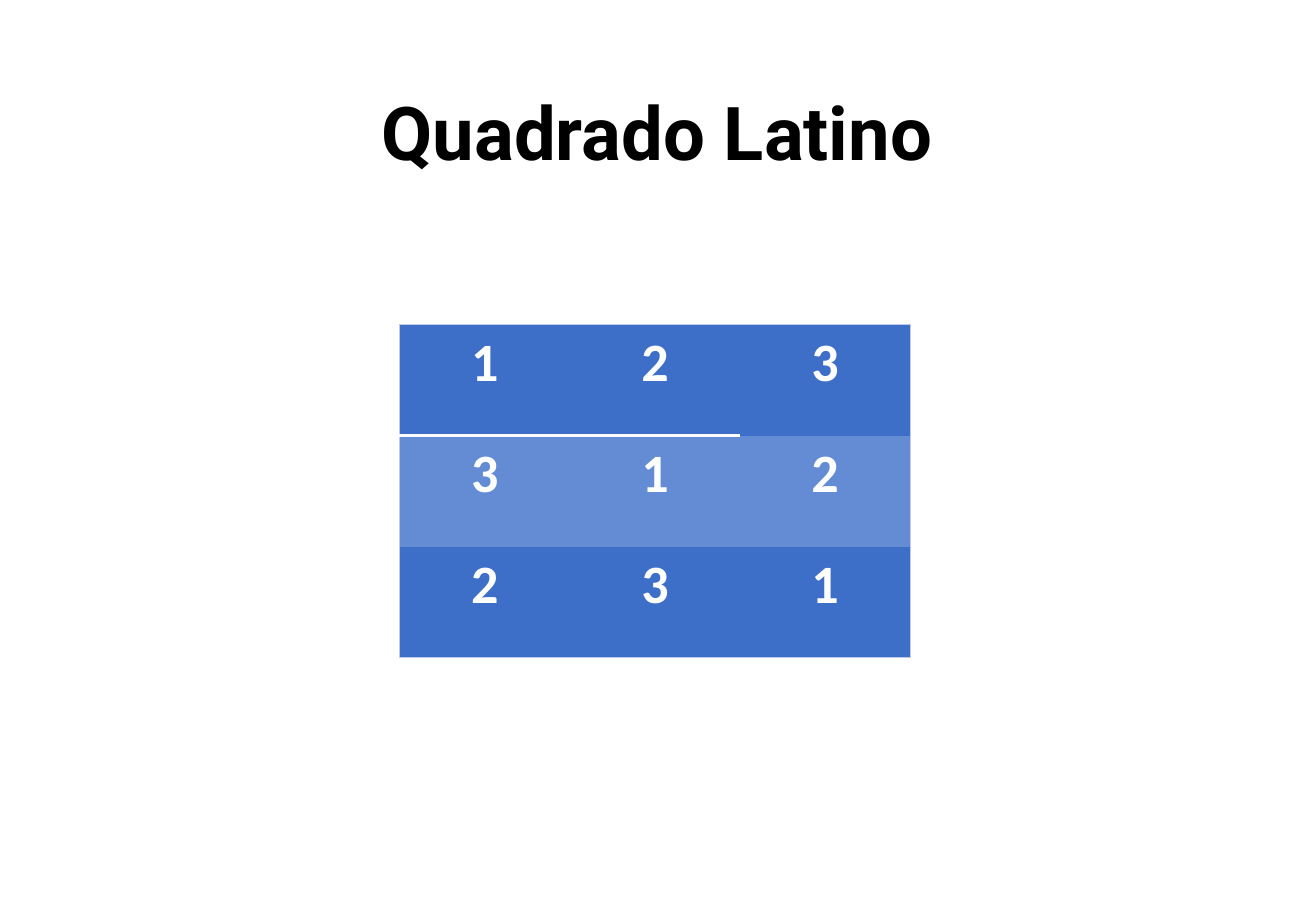
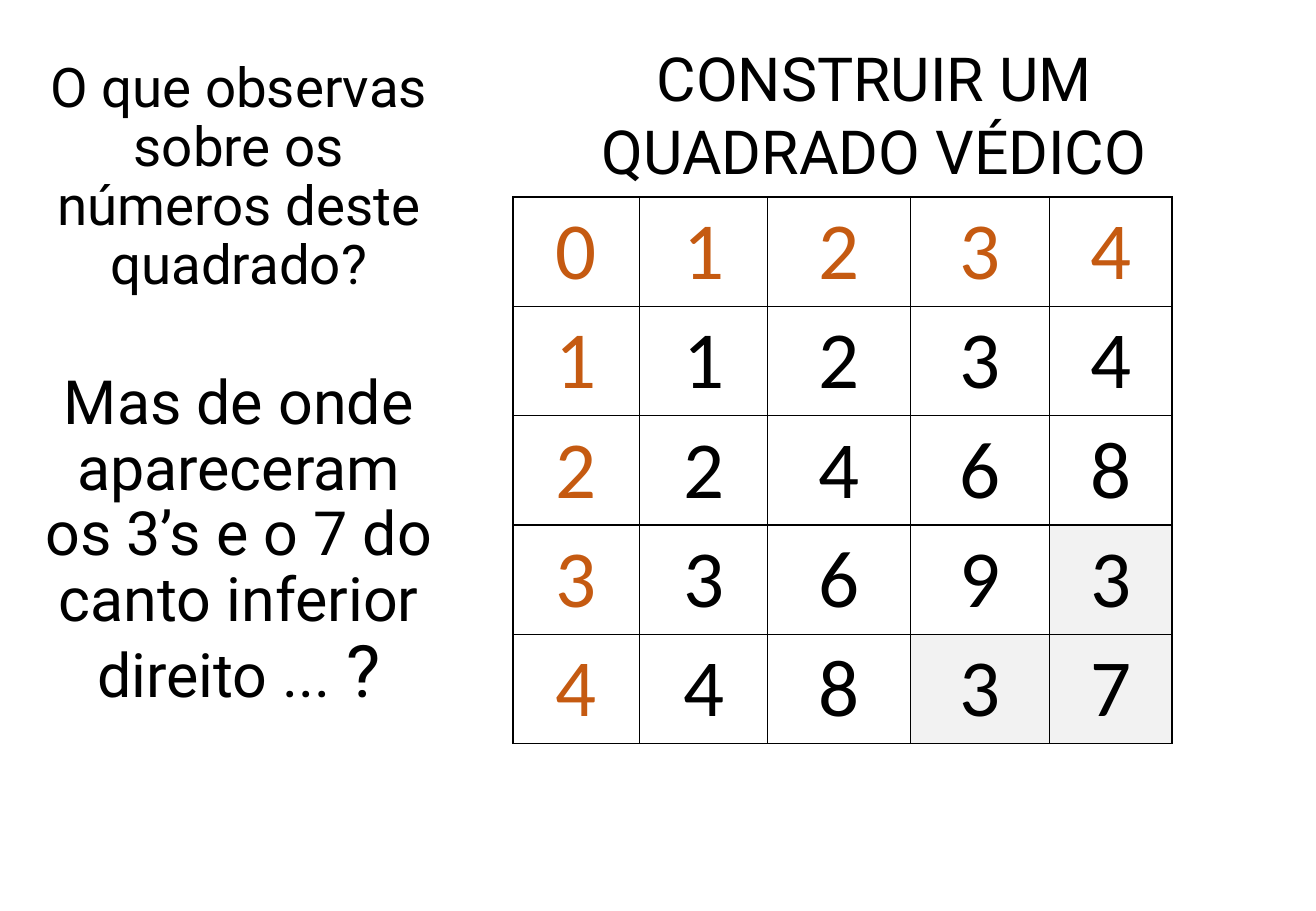
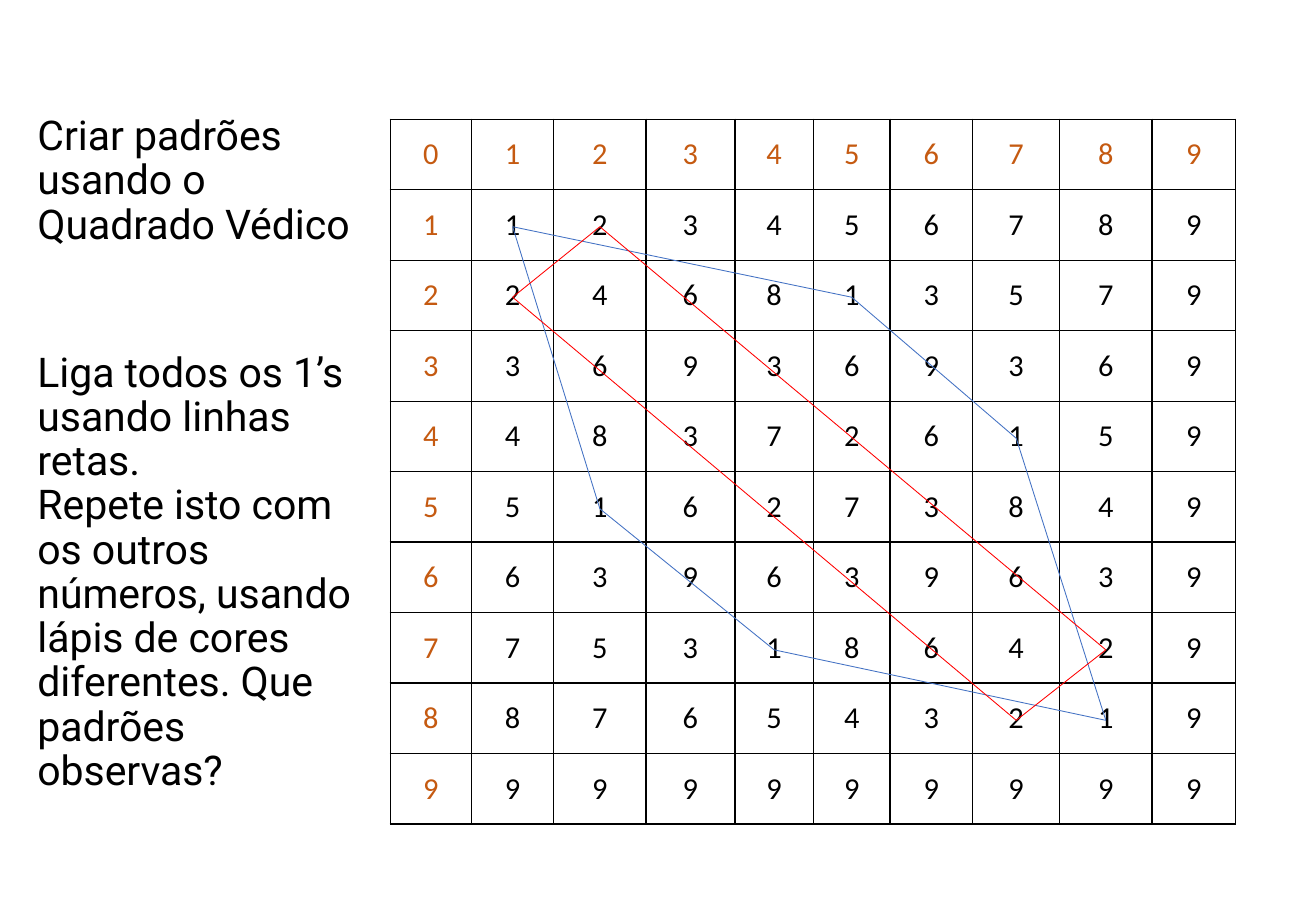
"""Builds three slides about Latin and Vedic squares."""
from itertools import accumulate

from lxml import etree
from pptx import Presentation
from pptx.dml.color import RGBColor
from pptx.enum.shapes import MSO_CONNECTOR
from pptx.enum.text import MSO_ANCHOR, PP_ALIGN
from pptx.oxml.ns import qn
from pptx.util import Pt

STRAIGHT = MSO_CONNECTOR.STRAIGHT
TOP, MIDDLE = MSO_ANCHOR.TOP, MSO_ANCHOR.MIDDLE
LEFT, CENTER = PP_ALIGN.LEFT, PP_ALIGN.CENTER

BLACK = RGBColor(0x00, 0x00, 0x00)
WHITE = RGBColor(0xFF, 0xFF, 0xFF)
ORANGE = RGBColor(0xC5, 0x5A, 0x11)
GREY = RGBColor(0xF2, 0xF2, 0xF2)
PALE_BLUE = RGBColor(0xC1, 0xC9, 0xE4)
DARK_BLUE = RGBColor(0x3D, 0x6E, 0xC8)
MID_BLUE = RGBColor(0x64, 0x8C, 0xD4)
LINE_BLUE = RGBColor(0x44, 0x72, 0xC4)
RED = RGBColor(0xFF, 0x00, 0x00)

TEXT_FONT, TABLE_FONT = "Roboto", "Calibri"
EDGES = ("L", "R", "T", "B")


class Deck:
    """Holds the presentation, the current slide and the shared style."""

    def __init__(self):
        self.prs = Presentation()
        self.prs.slide_width, self.prs.slide_height = Pt(780), Pt(540)
        self.s = None

    def slide(self):
        """Starts a blank slide."""
        self.s = self.prs.slides.add_slide(self.prs.slide_layouts[6])

    def style(self, p, font, size, color, bold=False):
        """Formats every run of a paragraph."""
        for r in p.runs:
            r.font.name, r.font.size, r.font.bold = font, Pt(size), bold
            r.font.color.rgb = color

    def text(self, x, y, w, h, lines, size, align=CENTER, anchor=TOP,
             spacing=0.9, gap=0, bold=False):
        """Adds a text box with one paragraph per line and a gap after the first."""
        tf = self.s.shapes.add_textbox(Pt(x), Pt(y), Pt(w), Pt(h)).text_frame
        tf.word_wrap, tf.vertical_anchor = True, anchor
        tf.text = "\n".join(lines)
        for p in tf.paragraphs:
            p.alignment, p.line_spacing = align, spacing
            self.style(p, TEXT_FONT, size, BLACK, bold)
        if gap:
            tf.paragraphs[1].space_before = Pt(gap)
        return tf

    def table(self, x, y, cols, row_h, values, size, anchor=TOP):
        """Adds a plain table of centred values."""
        rows = len(values)
        tbl = self.s.shapes.add_table(rows, len(cols), Pt(x), Pt(y), Pt(sum(cols)),
                                      Pt(row_h * rows)).table
        tbl.first_row = tbl.horz_banding = False
        for col, w in zip(tbl.columns, cols):
            col.width = Pt(w)
        for i, row in enumerate(values):
            tbl.rows[i].height = Pt(row_h)
            for j, value in enumerate(row):
                cell = tbl.cell(i, j)
                cell.margin_left = cell.margin_right = Pt(5.8)
                cell.margin_top = cell.margin_bottom = Pt(3.25)
                cell.vertical_anchor = anchor
                p = cell.text_frame.paragraphs[0]
                p.text, p.alignment = str(value), CENTER
                self.style(p, TABLE_FONT, size, BLACK)
        return tbl

    def paint(self, cell, borders, fill=None):
        """Sets the borders of a cell, given as edge: (colour, width), and its fill."""
        tc_pr = cell._tc.get_or_add_tcPr()
        for edge in EDGES:
            ln = etree.SubElement(tc_pr, qn(f"a:ln{edge}"))
            if edge in borders:
                color, width = borders[edge]
                ln.set("w", str(Pt(width)))
                solid = etree.SubElement(ln, qn("a:solidFill"))
                etree.SubElement(solid, qn("a:srgbClr")).set("val", str(color))
            else:
                etree.SubElement(ln, qn("a:noFill"))
        if fill is None:
            cell.fill.background()
        else:
            cell.fill.solid()
            cell.fill.fore_color.rgb = fill

    def latin_square(self, x, y, cols, row_h, values):
        """Adds the blue square with a pale frame and a white rule."""
        tbl = self.table(x, y, cols, row_h, values, 32)
        last = len(cols) - 1
        frame, rule = (PALE_BLUE, 0.5), (WHITE, 1.5)
        for i in range(len(values)):
            for j in range(len(cols)):
                on_frame = {"L": j == 0, "R": j == last, "T": i == 0, "B": i == last}
                borders = {edge: frame for edge in EDGES if on_frame[edge]}
                if i < 2 and j < last:
                    borders["T" if i else "B"] = rule
                cell = tbl.cell(i, j)
                self.style(cell.text_frame.paragraphs[0], TABLE_FONT, 32, WHITE, True)
                self.paint(cell, borders, MID_BLUE if i % 2 else DARK_BLUE)

    def vedic_square(self, x, y, cols, row_h, size, shaded=()):
        """Adds a table of digit sums of products, with orange headers."""
        n = len(cols)
        values = [[(i * j - 1) % 9 + 1 if i * j else i + j for j in range(n)]
                  for i in range(n)]
        tbl = self.table(x, y, cols, row_h, values, size, MIDDLE)
        borders = dict.fromkeys(EDGES, (BLACK, 1))
        for i in range(n):
            for j in range(n):
                cell = tbl.cell(i, j)
                if i * j == 0:
                    self.style(cell.text_frame.paragraphs[0], TABLE_FONT, size, ORANGE)
                self.paint(cell, borders, GREY if (i, j) in shaded else None)

    def loop(self, points, color):
        """Joins points with thin lines into a closed outline."""
        for start, end in zip(points, points[1:] + points[:1]):
            line = self.s.shapes.add_connector(STRAIGHT, *map(Pt, start + end))
            line.line.color.rgb, line.line.width = color, Pt(0.5)
            etree.SubElement(line._element.spPr, qn("a:effectLst"))


def main():
    """Draws the slides and saves them."""
    d = Deck()

    d.slide()
    d.text(53.3, 28.8, 672.5, 104.4, ["Quadrado Latino"], 44, anchor=MIDDLE, bold=True)
    d.latin_square(237, 192.4, [100.8] * 3, 65.8, [(1, 2, 3), (3, 1, 2), (2, 3, 1)])

    d.slide()
    d.text(17.3, 20.9, 248.4, 170, ["O que observas sobre os números deste quadrado?"],
           32.4, anchor=MIDDLE)
    d.text(273.6, 20.9, 480.2, 94.3, [" CONSTRUIR UM", " QUADRADO VÉDICO"], 36, spacing=1)
    d.vedic_square(304, 116.8, [75.2, 75.7, 85, 82.2, 72.7], 64.8, 48,
                   shaded=[(3, 4), (4, 3), (4, 4)])
    tf = d.text(17.3, 216.7, 248.4, 245.5,
                ["Mas de onde apareceram os 3’s e o 7 do canto inferior direito ... "], 36.1)
    r = tf.paragraphs[0].add_run()
    r.text = "?"
    r.font.name, r.font.size, r.font.color.rgb = TEXT_FONT, Pt(42.9), BLACK

    d.slide()
    d.text(15.1, 64.8, 202.3, 430.6,
           ["Criar padrões usando o Quadrado Védico",
            "Liga todos os 1’s usando linhas retas.",
            "Repete isto com os outros números, usando lápis de cores diferentes. "
            "Que padrões observas?"], 24.3, align=LEFT, gap=61.5)
    x, y, row_h = 231.3, 70.7, 41.8
    cols = [48.2, 48.7, 54.7, 52.7, 46.5, 45.5, 49, 51.5, 54.7, 49.7]
    d.vedic_square(x, y, cols, row_h, 18)
    mids = [x + right - w / 2 for right, w in zip(accumulate(cols), cols)]
    ones = [(1, 1), (5, 2), (7, 4), (8, 8), (4, 7), (2, 5)]
    twos = [(1, 2), (2, 1), (8, 7), (7, 8)]
    for cells, color in ((ones, LINE_BLUE), (twos, RED)):
        d.loop([(mids[j], y + row_h * (i + 0.5) + 1) for i, j in cells], color)

    d.prs.save("out.pptx")


if __name__ == "__main__":
    main()
